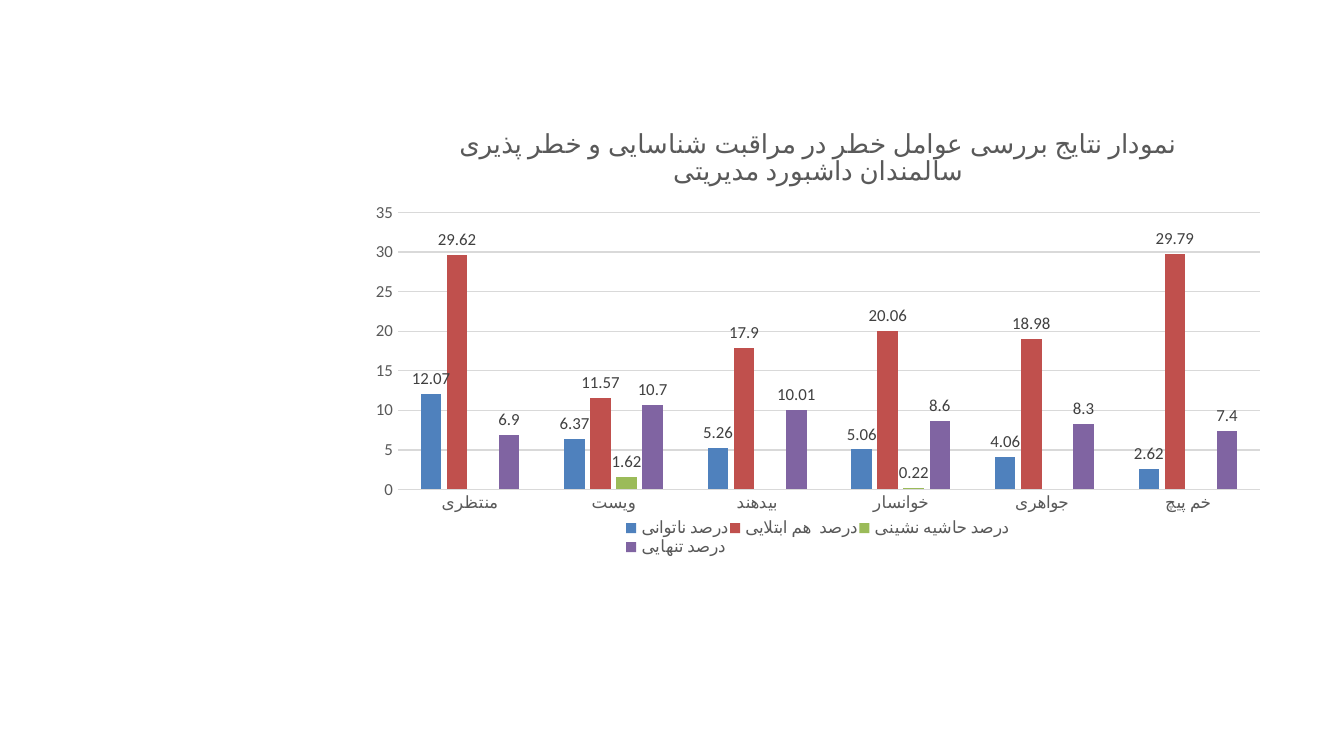
from lxml.etree import SubElement
from pptx import Presentation
from pptx.chart.data import CategoryChartData
from pptx.dml.color import RGBColor
from pptx.enum.chart import (
    XL_CHART_TYPE as ChartType,
    XL_LABEL_POSITION as LabelPosition,
    XL_LEGEND_POSITION as LegendPosition,
    XL_TICK_MARK as TickMark,
)
from pptx.oxml.ns import qn
from pptx.util import Inches, Pt

WIDTH = 10
HEIGHT = WIDTH * 9 / 16
FONT = "Calibri"
GRAY, DARK_GRAY, LIGHT_GRAY = "595959", "404040", "D9D9D9"

HEADING = "نمودار نتایج بررسی عوامل خطر در مراقبت شناسایی و خطر پذیری سالمندان داشبورد مدیریتی"
CENTERS = ["منتظری", "ویست", "بیدهند", "خوانسار", "جواهری ", "خم پیچ"]
RISK_FACTORS = [
    ("درصد ناتوانی", "4F81BD", [12.07, 6.37, 5.26, 5.06, 4.06, 2.62]),
    ("درصد  هم ابتلایی", "C0504D", [29.62, 11.57, 17.9, 20.06, 18.98, 29.79]),
    ("درصد حاشیه نشینی", "9BBB59", [None, 1.62, None, 0.22, None, None]),
    ("درصد تنهایی", "8064A2", [6.9, 10.7, 10.01, 8.6, 8.3, 7.4]),
]


def rgb(code):
    return RGBColor.from_string(code)


def across(percent):
    return Inches(WIDTH * percent / 100)


def down(percent):
    return Inches(HEIGHT * percent / 100)


def format_font(font, size=9, color=GRAY, bold=False):
    font.name = FONT
    font.size = Pt(size)
    font.bold = bold
    font.color.rgb = rgb(color)


def write_text(frame, text, **style):
    run = frame.paragraphs[0].add_run()
    run.text = text
    format_font(run.font, **style)


def format_line(line, color=LIGHT_GRAY, width=0.75):
    line.color.rgb = rgb(color)
    line.width = Pt(width)


def add_risk_chart(slide, left, top, width, height):
    data = CategoryChartData()
    data.categories = CENTERS
    for name, _, values in RISK_FACTORS:
        data.add_series(name, values)
    frame = slide.shapes.add_chart(
        ChartType.COLUMN_CLUSTERED,
        across(left), down(top), across(width), down(height), data,
    )
    chart = frame.chart
    format_font(chart.font, size=10, color="000000")
    chart.has_title = True
    write_text(chart.chart_title.text_frame, HEADING, size=14)
    chart.chart_title.include_in_layout = False
    return chart


def format_axes(chart):
    for axis in (chart.category_axis, chart.value_axis):
        axis.major_tick_mark = axis.minor_tick_mark = TickMark.NONE
        format_font(axis.tick_labels.font)
    format_line(chart.category_axis.format.line)
    chart.value_axis.format.line.fill.background()
    chart.value_axis.has_major_gridlines = True
    format_line(chart.value_axis.major_gridlines.format.line)


def format_columns(chart):
    plot = chart.plots[0]
    plot.gap_width = 219
    plot.overlap = -27
    plot.vary_by_categories = False
    for series, (_, color, _) in zip(plot.series, RISK_FACTORS):
        series.format.fill.solid()
        series.format.fill.fore_color.rgb = rgb(color)
        series.invert_if_negative = False
        labels = series.data_labels
        labels.show_value = True
        labels.position = LabelPosition.OUTSIDE_END
        format_font(labels.font, color=DARK_GRAY)


def add_legend(chart, **bounds):
    chart.has_legend = True
    legend = chart.legend
    legend.position = LegendPosition.BOTTOM
    legend.include_in_layout = False
    format_font(legend.font)
    legend_xml = chart.element.find(f".//{qn('c:legend')}") if hasattr(chart, "element") else legend._element
    for old_layout in legend_xml.findall(qn("c:layout")):
        legend_xml.remove(old_layout)
    layout = SubElement(legend_xml, qn("c:layout"))
    legend_xml.find(qn("c:legendPos")).addnext(layout)
    manual = SubElement(layout, qn("c:manualLayout"))
    for edge in ("xMode", "yMode"):
        SubElement(manual, qn(f"c:{edge}")).set("val", "edge")
    for side, share in bounds.items():
        SubElement(manual, qn(f"c:{side}")).set("val", str(share))


def main():
    deck = Presentation()
    deck.slide_width, deck.slide_height = Inches(WIDTH), Inches(HEIGHT)
    blank_layout = deck.slide_layouts[6]
    slide = deck.slides.add_slide(blank_layout)
    chart = add_risk_chart(slide, left=26.6, top=14.4, width=68.5, height=59.4)
    format_axes(chart)
    format_columns(chart)
    add_legend(chart, x=0.29, y=0.91, w=0.42, h=0.09)
    deck.save("out.pptx")


if __name__ == "__main__":
    main()
